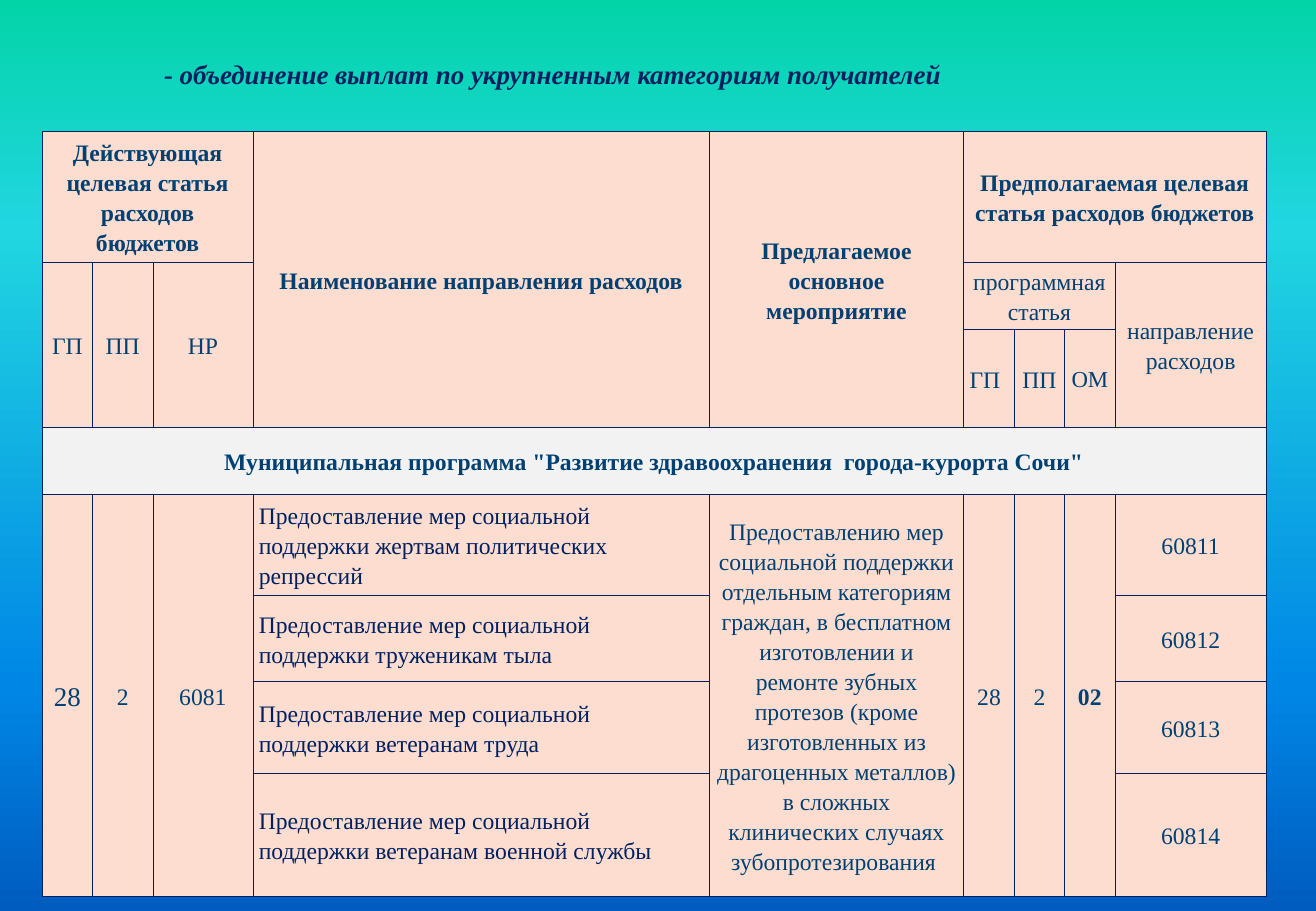
from lxml.etree import SubElement
from pptx import Presentation
from pptx.dml.color import RGBColor as Rgb
from pptx.enum.text import MSO_ANCHOR as Anchor, MSO_AUTO_SIZE as AutoSize, PP_ALIGN as Align
from pptx.oxml import parse_xml
from pptx.oxml.ns import nsdecls, qn
from pptx.util import Inches, Pt

WIDTH, HEIGHT = 10.83, 7.5
FONT = "Times New Roman"
COLORS = {"navy": "002060", "blue": "004072", "peach": "FCDDD0", "grey": "F2F2F2"}
SKY = [(0, "03D4A8"), (25, "21D6E0"), (75, "0087E6"), (100, "005CBF")]

COLUMNS = [0.41, 0.5, 0.82, 3.76, 2.09, 0.42, 0.41, 0.42, 1.24]
ROWS = [1.08, 0.55, 0.81, 0.55, 0.83, 0.71, 0.76, 1.01]
BOLD = {"bold": True}
LEFT = {"align": Align.LEFT}

# Row, column, row span, column span, text, formatting
HEADER = [
    (0, 0, 1, 3, "Действующая целевая статья расходов бюджетов", BOLD),
    (0, 3, 3, 1, "Наименование направления расходов", BOLD),
    (0, 4, 3, 1, "Предлагаемое основное мероприятие", BOLD),
    (0, 5, 1, 4, "Предполагаемая целевая статья расходов бюджетов", BOLD),
    (1, 0, 2, 1, "ГП", {}),
    (1, 1, 2, 1, "ПП", {}),
    (1, 2, 2, 1, "НР", {}),
    (1, 5, 1, 3, "программная статья", {}),
    (1, 8, 2, 1, "направление расходов", {}),
    (2, 5, 1, 1, "ГП", LEFT),
    (2, 6, 1, 1, "ПП", {}),
    (2, 7, 1, 1, "ОМ", {"size": 13.5}),
]
PROGRAM = [
    (3, 0, 1, 9, 'Муниципальная программа "Развитие здравоохранения  города-курорта Сочи"',
     {"bold": True, "fill": "grey"}),
]
SHARED = [
    (4, 0, 4, 1, "28", {"size": 16}),
    (4, 1, 4, 1, "2", {}),
    (4, 2, 4, 1, "6081", {}),
    (4, 4, 4, 1, "Предоставлению мер социальной поддержки отдельным категориям граждан, "
                 "в бесплатном изготовлении и ремонте зубных протезов (кроме изготовленных "
                 "из драгоценных металлов) в сложных клинических случаях "
                 "зубопротезирования ", {}),
    (4, 5, 4, 1, "28", {}),
    (4, 6, 4, 1, "2", {}),
    (4, 7, 4, 1, "02", BOLD),
]
RECIPIENTS = ["жертвам политических репрессий", "труженикам тыла",
              "ветеранам труда", "ветеранам военной службы"]


def format_run(run, size, color, bold=False, italic=False):
    font = run.font
    font.name, font.size, font.bold, font.italic = FONT, Pt(size), bold, italic
    font.color.rgb = Rgb.from_string(COLORS[color])


def paint_background(slide):
    fill = slide.background.fill
    fill.gradient()
    fill.gradient_angle = 270
    stops = next(slide.background._cSld.iter(qn("a:gsLst")))
    for stop in list(stops):
        stops.remove(stop)
    for share, color in SKY:
        stop = SubElement(stops, qn("a:gs"), pos=str(share * 1000))
        SubElement(stop, qn("a:srgbClr"), val=color)


def place_title(slide, left, top, width, height):
    title = slide.shapes.title
    title.left, title.top = Inches(left), Inches(top)
    title.width, title.height = Inches(width), Inches(height)
    frame = title.text_frame
    frame.text = "- объединение выплат по укрупненным категориям получателей"
    frame.word_wrap, frame.auto_size = True, AutoSize.SHAPE_TO_FIT_TEXT
    frame.vertical_anchor = Anchor.TOP
    frame.paragraphs[0].alignment = Align.LEFT
    format_run(frame.paragraphs[0].runs[0], 16, "navy", bold=True, italic=True)


def style_cell(cell, fill="peach"):
    cell.fill.solid()
    cell.fill.fore_color.rgb = Rgb.from_string(COLORS[fill])
    cell.vertical_anchor = Anchor.MIDDLE
    cell.margin_left = cell.margin_right = Inches(0.05)
    cell.margin_top = cell.margin_bottom = 0
    # Borders precede the fill in the cell properties
    properties = cell._tc.get_or_add_tcPr()
    for index, side in enumerate("LRTB"):
        properties.insert(index, parse_xml(
            f'<a:ln{side} {nsdecls("a")} w="{Pt(0.25)}"><a:solidFill>'
            f'<a:srgbClr val="{COLORS["navy"]}"/></a:solidFill></a:ln{side}>'))


def write_cell(cell, text, size=14, color="blue", bold=False, align=Align.CENTER):
    cell.text_frame.text = text
    paragraph = cell.text_frame.paragraphs[0]
    paragraph.alignment, paragraph.line_spacing = align, 1.15
    format_run(paragraph.runs[0], size, color, bold)


def place_budget_table(slide, left, top, width, height):
    table = slide.shapes.add_table(len(ROWS), len(COLUMNS), Inches(left), Inches(top),
                                   Inches(width), Inches(height)).table
    table.first_row = table.horz_banding = False
    for column, share in zip(table.columns, COLUMNS):
        column.width = Inches(width * share / sum(COLUMNS))
    for row, share in zip(table.rows, ROWS):
        row.height = Inches(height * share / sum(ROWS))

    # One line per category of recipients, with its own expense code
    lines = []
    for index, recipient in enumerate(RECIPIENTS):
        lines += [
            (4 + index, 3, 1, 1, f"Предоставление мер социальной поддержки {recipient}",
             {"color": "navy", **LEFT}),
            (4 + index, 8, 1, 1, str(60811 + index), {}),
        ]

    for row, column, tall, wide, text, formatting in HEADER + PROGRAM + SHARED + lines:
        formatting = dict(formatting)
        fill = formatting.pop("fill", "peach")
        for r in range(row, row + tall):
            for c in range(column, column + wide):
                style_cell(table.cell(r, c), fill)
        origin = table.cell(row, column)
        if tall * wide > 1:
            origin.merge(table.cell(row + tall - 1, column + wide - 1))
        write_cell(origin, text, **formatting)


def main():
    deck = Presentation()
    deck.slide_width, deck.slide_height = Inches(WIDTH), Inches(HEIGHT)
    slide = deck.slides.add_slide(deck.slide_layouts[5])
    paint_background(slide)
    place_title(slide, 1.25, 0.42, 9.17, 0.37)
    place_budget_table(slide, 0.35, 1.08, sum(COLUMNS), sum(ROWS))
    deck.save("out.pptx")


if __name__ == "__main__":
    main()
